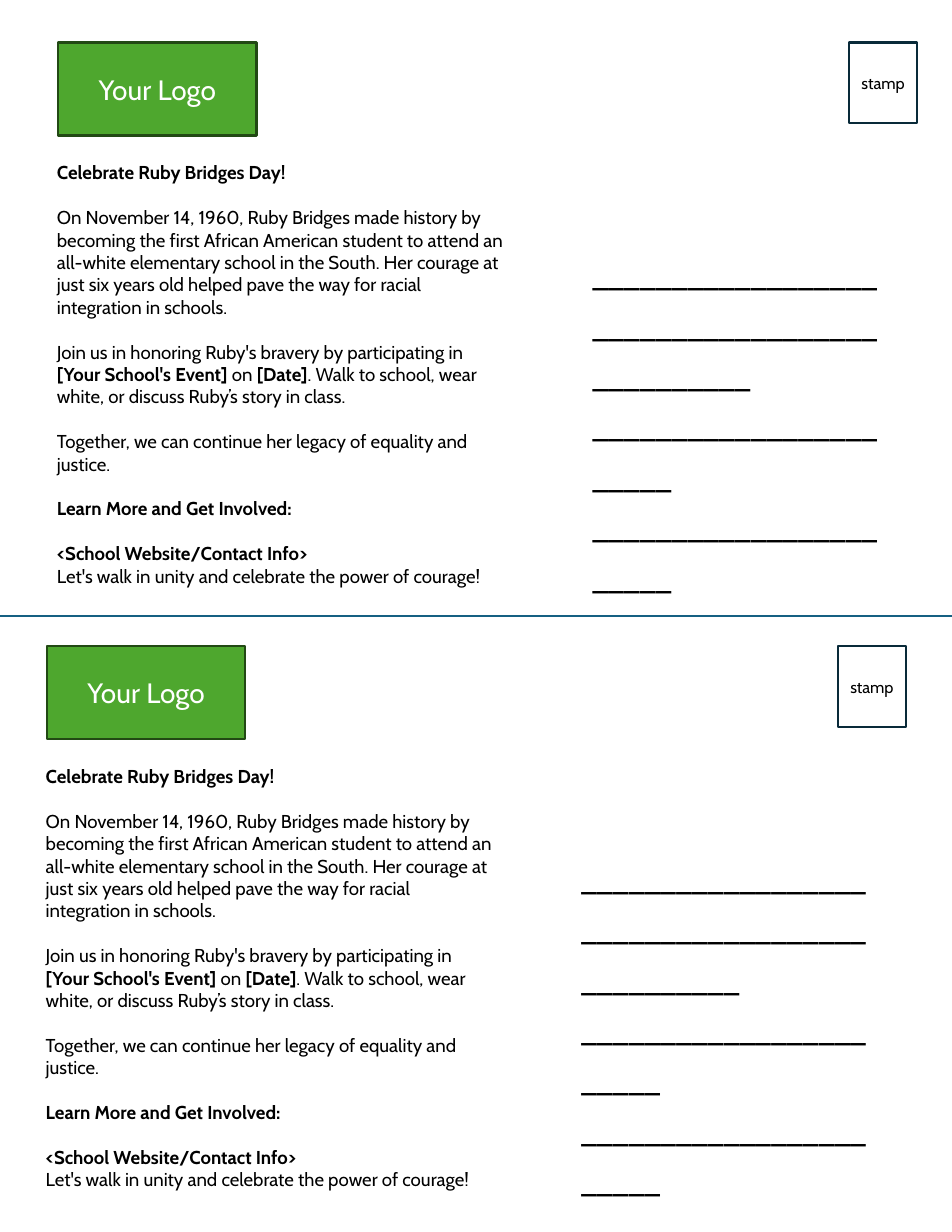
from dataclasses import dataclass

from lxml import etree
from pptx import Presentation
from pptx.dml.color import RGBColor
from pptx.enum import shapes, text
from pptx.oxml import ns
from pptx.util import Inches, Pt


@dataclass(frozen=True)
class Theme:
    font: str = "Cabin"
    ink: str = "000000"
    white: str = "FFFFFF"
    green: str = "4EA72E"
    moss: str = "224914"
    navy: str = "092A39"
    blue: str = "156082"
    body: float = 12
    large: float = 18
    small: float = 10.5
    gap: float = 14.4
    rule: float = 1.5


@dataclass(frozen=True)
class Run:
    words: str
    bold: bool = False


@dataclass(frozen=True)
class Para:
    runs: tuple[Run, ...]
    gap: bool = True


@dataclass(frozen=True)
class Panel:
    label: str
    left: float
    width: float
    height: float
    fill: str
    line: str
    ink: str
    size: float


@dataclass(frozen=True)
class Card:
    left: float
    top: float


THEME = Theme()
CARDS = (Card(0.42, 5.77), Card(0.52, 0.38))
PANELS = (
    Panel("Your Logo", 0, 1.77, 0.83, THEME.green, THEME.moss, THEME.white, THEME.large),
    Panel("stamp", 7.06, 0.61, 0.72, THEME.white, THEME.navy, THEME.ink, THEME.small),
)
MESSAGE = (
    Para((Run("Celebrate Ruby Bridges Day!", True),), gap=False),
    Para((Run(
        "On November 14, 1960, Ruby Bridges made history by becoming the first "
        "African American student to attend an all-white elementary school in the "
        "South. Her courage at just six years old helped pave the way for racial "
        "integration in schools."
    ),)),
    Para((
        Run("Join us in honoring Ruby's bravery by participating in "),
        Run("[Your School's Event]", True),
        Run(" on "),
        Run("[Date]", True),
        Run(". Walk to school, wear white, or discuss Ruby’s story in class."),
    )),
    Para((Run("Together, we can continue her legacy of equality and justice."),)),
    Para((Run("Learn More and Get Involved:", True),)),
    Para((Run("<School Website/Contact Info>", True),)),
    Para((Run("Let's walk in unity and celebrate the power of courage!"),), gap=False),
)
ADDRESS = tuple(Para((Run("_" * count),), gap=False) for count in (46, 23, 23))


def tint(code: str) -> RGBColor:
    return RGBColor.from_string(code)


def add_run(para, run: Run, size: float, ink: str) -> None:
    part = para.add_run()
    part.text = run.words
    font = part.font
    font.name, font.size, font.bold = THEME.font, Pt(size), run.bold
    font.color.rgb = tint(ink)


def add_text(slide, left: float, top: float, width: float, height: float,
             paras: tuple[Para, ...], size: float, pitch: float = 1.0) -> None:
    box = slide.shapes.add_textbox(*map(Inches, (left, top, width, height)))
    frame = box.text_frame
    frame.word_wrap = True
    frame.auto_size = text.MSO_AUTO_SIZE.SHAPE_TO_FIT_TEXT
    for index, item in enumerate(paras):
        para = frame.add_paragraph() if index else frame.paragraphs[0]
        para.line_spacing = pitch
        para.space_before = Pt(THEME.gap if item.gap else 0)
        for run in item.runs:
            add_run(para, run, size, THEME.ink)


def add_panel(slide, card: Card, panel: Panel) -> None:
    box = slide.shapes.add_shape(
        shapes.MSO_SHAPE.RECTANGLE, Inches(card.left + panel.left),
        Inches(card.top), Inches(panel.width), Inches(panel.height))
    box.shadow.inherit = False
    box.fill.solid()
    box.fill.fore_color.rgb = tint(panel.fill)
    box.line.color.rgb = tint(panel.line)
    box.line.width = Pt(THEME.rule)
    frame = box.text_frame
    frame.word_wrap = True
    frame.vertical_anchor = text.MSO_ANCHOR.MIDDLE
    para = frame.paragraphs[0]
    para.alignment = text.PP_ALIGN.CENTER
    add_run(para, Run(panel.label), panel.size, panel.ink)


def add_card(slide, card: Card) -> None:
    add_text(slide, card.left - 0.11, card.top + 1.01, 4.21, 3.94, MESSAGE, THEME.body)
    for panel in PANELS:
        add_panel(slide, card, panel)
    add_text(slide, card.left + 4.67, card.top + 1.74, 2.84, 2.33,
             ADDRESS, THEME.large, 1.5)


def add_cut(slide) -> None:
    """Mark where the sheet is cut into two cards."""
    line = slide.shapes.add_connector(
        shapes.MSO_CONNECTOR.STRAIGHT, *map(Inches, (-0.13, 5.5, 8.93, 5.5)))
    line.line.color.rgb = tint(THEME.blue)
    line.line.width = Pt(THEME.rule)
    etree.SubElement(line._element.spPr, ns.qn("a:effectLst"))


def main() -> None:
    deck = Presentation()
    deck.slide_width, deck.slide_height = Inches(8.5), Inches(11)
    slide = deck.slides.add_slide(deck.slide_layouts[6])
    add_cut(slide)
    for card in CARDS:
        add_card(slide, card)
    deck.save("out.pptx")


if __name__ == "__main__":
    main()
